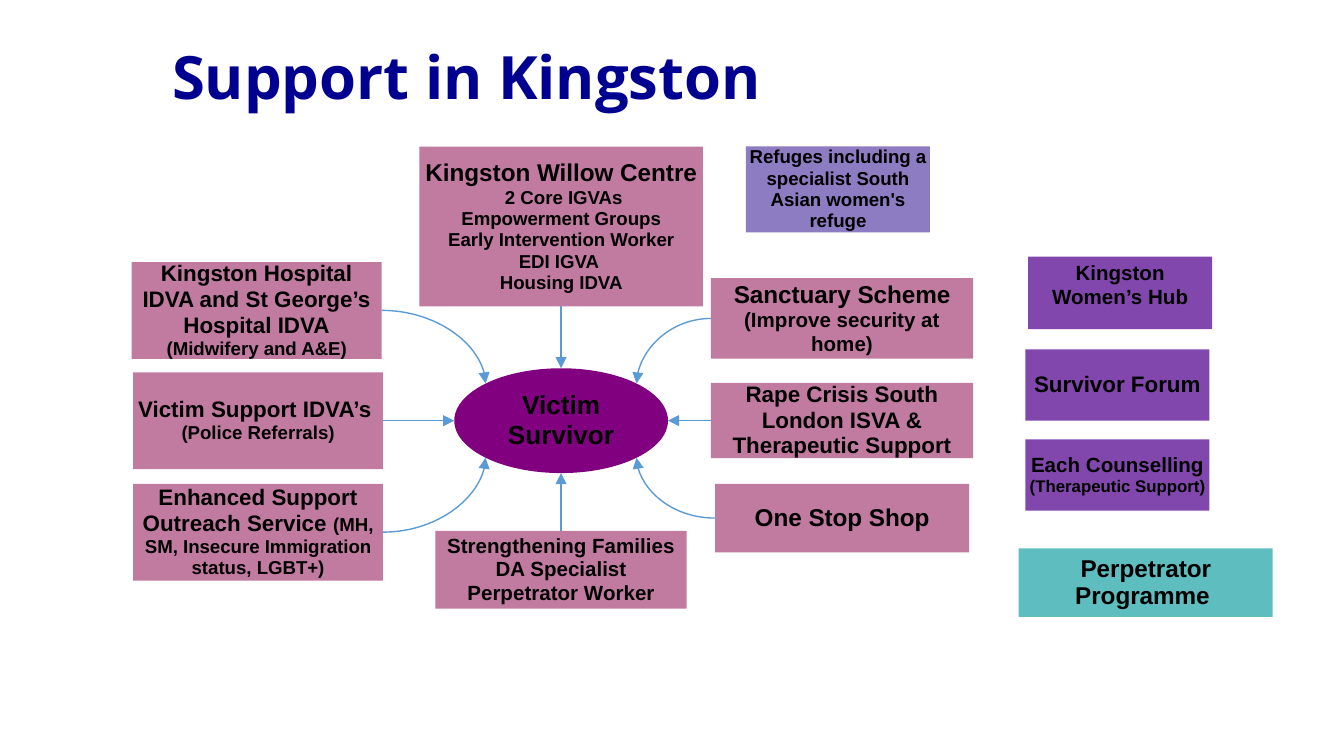
from math import cos, pi
from lxml import etree
from pptx import Presentation
from pptx.dml.color import RGBColor
from pptx.enum.shapes import MSO_CONNECTOR, MSO_SHAPE
from pptx.enum.text import MSO_ANCHOR, MSO_AUTO_SIZE, PP_ALIGN
from pptx.oxml.ns import qn
from pptx.util import Inches, Pt

COLORS = {
    "title": "000090", "text": "000000", "victim": "800080", "service": "C27BA0",
    "community": "8247AD", "refuge": "8E7CC3", "perpetrator": "5EBEBF", "arrow": "5B9BD5",
}


def add_box(box, color, paragraphs, shape=MSO_SHAPE.RECTANGLE):
    s = slide.shapes.add_shape(shape, *[Inches(v) for v in box])
    s.shadow.inherit = False
    s.fill.solid()
    s.fill.fore_color.rgb = RGBColor.from_string(COLORS[color])
    s.line.fill.background()
    tf = s.text_frame
    tf.word_wrap = True
    tf.vertical_anchor = MSO_ANCHOR.MIDDLE
    tf.margin_left = tf.margin_right = tf.margin_top = tf.margin_bottom = Inches(0.02)
    for i, runs in enumerate(paragraphs):
        p = tf.add_paragraph() if i else tf.paragraphs[0]
        p.alignment = PP_ALIGN.CENTER
        p.line_spacing = 0.95
        p.font.name = "Arial"
        p.font.bold = True
        p.font.color.rgb = RGBColor.from_string(COLORS["text"])
        if len(runs) == 1:
            p.font.size = Pt(runs[0][1])
        for text, size in runs:
            r = p.add_run()
            r.text = text
            if len(runs) > 1:
                r.font.size = Pt(size)
    return s


def add_arrow(kind, start, end):
    c = slide.shapes.add_connector(kind, *start, *end)
    c.line.color.rgb = RGBColor.from_string(COLORS["arrow"])
    c.line.width = Pt(0.75)
    etree.SubElement(c.line._get_or_add_ln(), qn("a:tailEnd"), type="triangle")
    etree.SubElement(c._element.spPr, qn("a:effectLst"))
    return c


prs = Presentation()
prs.slide_width = Inches(10)
prs.slide_height = Inches(10) * 9 // 16
slide = prs.slides.add_slide(prs.slide_layouts[5])

title = slide.shapes.title
title.left, title.top, title.width, title.height = [Inches(v) for v in (1.18, 0.16, 8.64, 0.81)]
tf = title.text_frame
tf.text = "Support in Kingston"
tf.auto_size = MSO_AUTO_SIZE.NONE
tf.vertical_anchor = MSO_ANCHOR.MIDDLE
p = tf.paragraphs[0]
p.alignment = PP_ALIGN.LEFT
p.font.name = "Open Sans"
p.font.size = Pt(32)
p.font.bold = True
p.font.color.rgb = RGBColor.from_string(COLORS["title"])

victim = add_box((3.38, 2.74, 1.59, 0.78), "victim", [[("Victim Survivor", 14)]], MSO_SHAPE.OVAL)

services = {
    "families": ((3.24, 3.95, 1.87, 0.58), [
        [("Strengthening Families", 11)], [("DA Specialist", 11)], [("Perpetrator Worker", 11)]]),
    "sanctuary": ((5.29, 2.07, 1.95, 0.6), [
        [("Sanctuary Scheme", 13)], [("(Improve security at home)", 11)]]),
    "crisis": ((5.29, 2.85, 1.95, 0.56), [
        [("Rape Crisis South London ISVA & Therapeutic Support", 12)]]),
    "outreach": ((0.99, 3.6, 1.86, 0.72), [
        [("Enhanced Support Outreach Service ", 12),
         ("(MH, SM, Insecure Immigration status, LGBT+)", 10)]]),
    "one_stop": ((5.32, 3.6, 1.89, 0.51), [[("One Stop Shop", 13)]]),
    "willow": ((3.12, 1.09, 2.11, 1.19), [
        [("Kingston Willow Centre", 13)], [(" 2 Core IGVAs", 10)], [("Empowerment Groups", 10)],
        [("Early Intervention Worker", 10)], [("EDI IGVA ", 10)], [("Housing IDVA", 10)]]),
    "police": ((0.99, 2.77, 1.86, 0.72), [
        [("Victim Support IDVA’s ", 12)], [("(Police Referrals)", 10)]]),
    "hospital": ((0.98, 1.95, 1.86, 0.72), [
        [("Kingston Hospital IDVA and St George’s Hospital IDVA", 12)],
        [("(Midwifery and A&E)", 10)]]),
}
boxes = {name: add_box(box, "service", text) for name, (box, text) in services.items()}

hub = add_box((7.65, 1.91, 1.37, 0.54), "community", [[("Kingston Women’s Hub", 11)]])
hub.text_frame.vertical_anchor = MSO_ANCHOR.TOP
hub.text_frame.margin_top = Inches(0.04)
add_box((7.63, 2.6, 1.37, 0.53), "community", [[("Survivor Forum", 12)]])
add_box((7.63, 3.27, 1.37, 0.53), "community",
        [[("Each Counselling ", 11), ("(Therapeutic Support)", 9)]])
add_box((5.55, 1.09, 1.37, 0.64), "refuge",
        [[("Refuges including a specialist South Asian women's refuge", 10)]])
add_box((7.58, 4.08, 1.89, 0.51), "perpetrator", [[("Perpetrator Programme ", 13)]])

rx, ry = victim.width // 2, victim.height // 2
cx, cy = victim.left + rx, victim.top + ry

for name, side, dx, dy in [("willow", 2, 0, -1), ("families", 0, 0, 1),
                           ("police", 3, -1, 0), ("crisis", 1, 1, 0)]:
    end = cx + dx * rx, cy + dy * ry
    c = add_arrow(MSO_CONNECTOR.STRAIGHT, end, end)
    c.begin_connect(boxes[name], side)

for name, dx, dy in [("hospital", -1, -1), ("outreach", -1, 1),
                     ("one_stop", 1, 1), ("sanctuary", 1, -1)]:
    s = boxes[name]
    start = s.left + (s.width if dx < 0 else 0), s.top + s.height // 2
    end = cx + int(dx * rx * cos(pi / 4)), cy + int(dy * ry * cos(pi / 4))
    c = add_arrow(MSO_CONNECTOR.CURVE, start, end)
    c._element.spPr.find(qn("a:prstGeom")).set("prst", "curvedConnector2")

prs.save("out.pptx")
